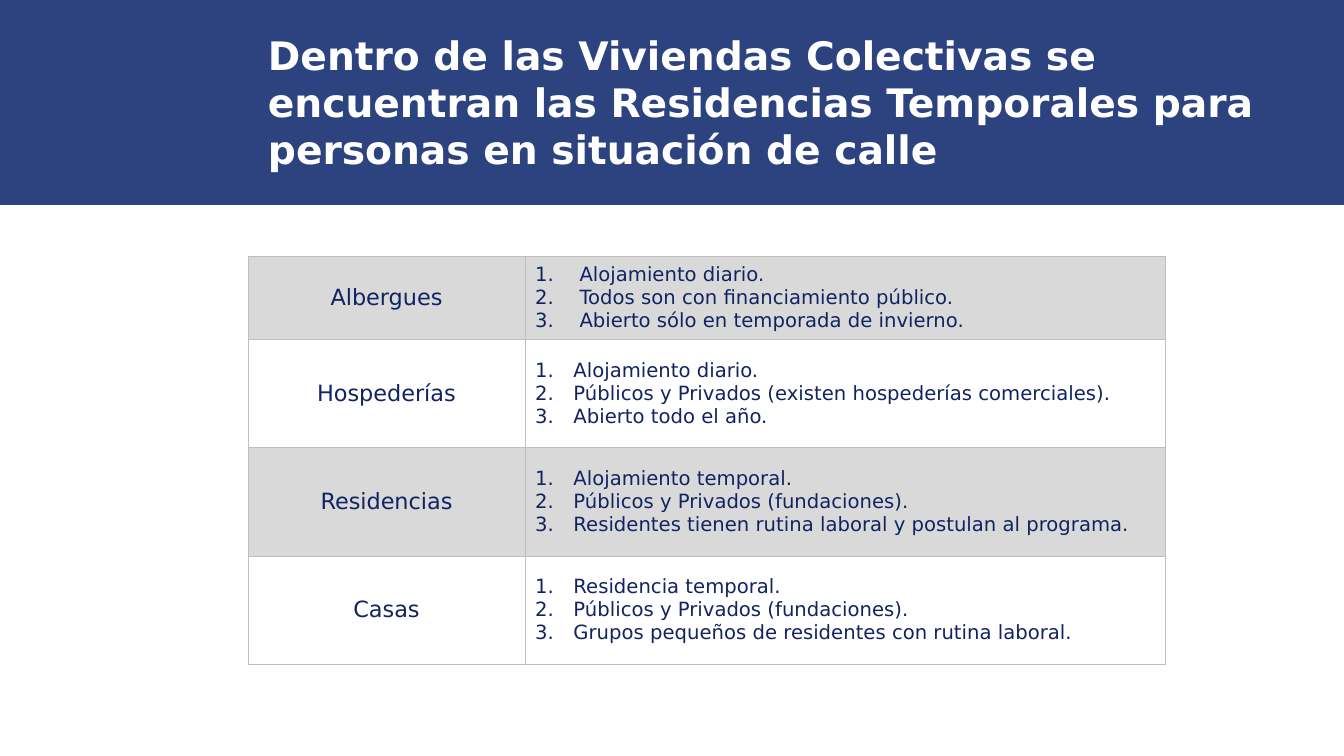
from dataclasses import dataclass

import pptx
import pptx.dml.color
import pptx.enum.shapes
import pptx.enum.text
import pptx.oxml
import pptx.oxml.ns
import pptx.util
from lxml import etree

Inches = pptx.util.Inches
qn = pptx.oxml.ns.qn
ALIGN = pptx.enum.text.PP_ALIGN
ANCHOR = pptx.enum.text.MSO_ANCHOR


@dataclass(frozen=True)
class Theme:
    font: str = "DejaVu Sans"
    band: str = "2C437F"
    title: str = "FFFFFF"
    ink: str = "122361"
    stripe: str = "D9D9D9"
    border: str = "BFBFBF"
    border_pt: float = 0.75
    title_pt: int = 28
    name_pt: int = 16
    trait_pt: int = 14


THEME = Theme()
WIDTH, HEIGHT = 13.33, 7.5
BAND_BOX = (0, 0, WIDTH, 0.271 * HEIGHT)
TABLE_BOX = (2.46, 2.54, 9.1, 4.05)
NAME_SHARE = 0.302
FIRST_ROW_SHARE = 0.205

TITLE = ("Dentro de las Viviendas Colectivas se encuentran las Residencias "
         "Temporales para personas en situación de calle")
# Name, hanging indent of the list in inches, traits
RESIDENCES = [
    ("Albergues", 0.44, ["Alojamiento diario.",
                         "Todos son con financiamiento público.",
                         "Abierto sólo en temporada de invierno."]),
    ("Hospederías", 0.38, ["Alojamiento diario.",
                           "Públicos y Privados (existen hospederías comerciales).",
                           "Abierto todo el año."]),
    ("Residencias", 0.38, ["Alojamiento temporal.",
                           "Públicos y Privados (fundaciones).",
                           "Residentes tienen rutina laboral y postulan al programa."]),
    ("Casas", 0.38, ["Residencia temporal.",
                     "Públicos y Privados (fundaciones).",
                     "Grupos pequeños de residentes con rutina laboral."]),
]


def rgb(color):
    return pptx.dml.color.RGBColor.from_string(color)


def add_run(paragraph, text, size, color, bold=False):
    run = paragraph.add_run()
    run.text = text
    run.font.name = THEME.font
    run.font.size = pptx.util.Pt(size)
    run.font.color.rgb = rgb(color)
    run.font.bold = bold


def number_paragraph(paragraph, indent):
    """Give the paragraph an automatic number in a hanging indent."""
    properties = paragraph._p.get_or_add_pPr()
    properties.set("marL", str(Inches(indent)))
    properties.set("indent", str(-Inches(indent)))
    etree.SubElement(properties, qn("a:buFont")).set("typeface", "+mj-lt")
    etree.SubElement(properties, qn("a:buAutoNum")).set("type", "arabicPeriod")


def style_cell(cell, striped):
    properties = cell._tc.get_or_add_tcPr()
    for side in ("a:lnL", "a:lnR", "a:lnT", "a:lnB"):
        line = etree.SubElement(properties, qn(side))
        line.set("w", str(pptx.util.Pt(THEME.border_pt)))
        fill = etree.SubElement(line, qn("a:solidFill"))
        etree.SubElement(fill, qn("a:srgbClr")).set("val", THEME.border)
    if striped:
        cell.fill.solid()
        cell.fill.fore_color.rgb = rgb(THEME.stripe)
    else:
        cell.fill.background()
    cell.vertical_anchor = ANCHOR.MIDDLE


def add_title_band(slide, box):
    left, top, width, height = box
    band = slide.shapes.add_shape(pptx.enum.shapes.MSO_SHAPE.RECTANGLE,
                                  *map(Inches, box))
    band.shadow.inherit = False
    band.fill.solid()
    band.fill.fore_color.rgb = rgb(THEME.band)
    band.line.fill.background()

    inset = 0.192 * width
    title = slide.shapes.add_textbox(
        Inches(left + inset), Inches(top + 0.128 * height),
        Inches(width - inset), Inches(0.744 * height)).text_frame
    title.word_wrap = True
    title.auto_size = pptx.enum.text.MSO_AUTO_SIZE.SHAPE_TO_FIT_TEXT
    add_run(title.paragraphs[0], TITLE, THEME.title_pt, THEME.title, bold=True)


def add_residence_table(slide, box):
    width, height = box[2:]
    table = slide.shapes.add_table(len(RESIDENCES), 2, *map(Inches, box)).table
    table.first_row = table.horz_banding = False
    table.columns[0].width = Inches(NAME_SHARE * width)
    table.columns[1].width = Inches((1 - NAME_SHARE) * width)
    other_share = (1 - FIRST_ROW_SHARE) / (len(RESIDENCES) - 1)

    for index, (name, indent, traits) in enumerate(RESIDENCES):
        share = other_share if index else FIRST_ROW_SHARE
        table.rows[index].height = Inches(share * height)
        name_cell, traits_cell = table.rows[index].cells
        for cell in (name_cell, traits_cell):
            style_cell(cell, striped=index % 2 == 0)

        heading = name_cell.text_frame.paragraphs[0]
        heading.alignment = ALIGN.CENTER
        add_run(heading, name, THEME.name_pt, THEME.ink)

        frame = traits_cell.text_frame
        for position, trait in enumerate(traits):
            item = frame.add_paragraph() if position else frame.paragraphs[0]
            number_paragraph(item, indent)
            add_run(item, trait, THEME.trait_pt, THEME.ink)


def main():
    deck = pptx.Presentation()
    deck.slide_width, deck.slide_height = Inches(WIDTH), Inches(HEIGHT)
    slide = deck.slides.add_slide(deck.slide_layouts[6])
    add_title_band(slide, BAND_BOX)
    add_residence_table(slide, TABLE_BOX)
    deck.save("out.pptx")


if __name__ == "__main__":
    main()
